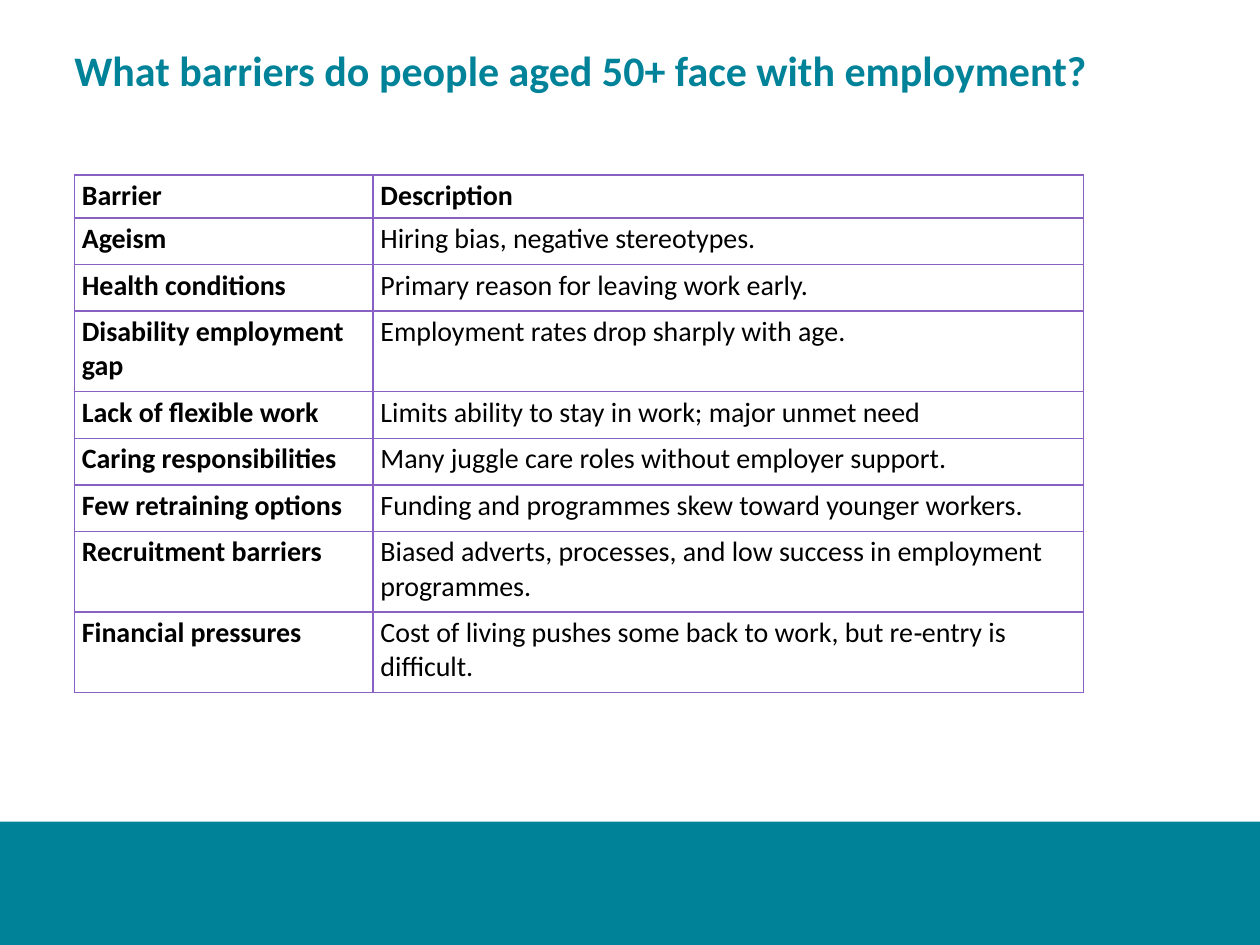
import pptx
import pptx.dml.color
import pptx.enum.shapes
import pptx.enum.text
import pptx.oxml
import pptx.oxml.ns
import pptx.util
from pptx.util import Inches

TEAL, PURPLE, BLACK = "008299", "8960C3", "000000"

ROWS = [
    ("Barrier", "Description"),
    ("Ageism", "Hiring bias, negative stereotypes."),
    ("Health conditions", "Primary reason for leaving work early."),
    ("Disability employment gap", "Employment rates drop sharply with age."),
    ("Lack of flexible work", "Limits ability to stay in work; major unmet need"),
    ("Caring responsibilities", "Many juggle care roles without employer support."),
    ("Few retraining options", "Funding and programmes skew toward younger workers."),
    ("Recruitment barriers",
     "Biased adverts, processes, and low success in employment programmes."),
    ("Financial pressures",
     "Cost of living pushes some back to work, but re‑entry is difficult."),
]
HEAD, ONE, TWO = 0.34, 0.37, 0.64  # row heights: header, one line, two lines
HEIGHTS = [HEAD, ONE, ONE, TWO, ONE, ONE, ONE, TWO, TWO]


def color(code):
    return pptx.dml.color.RGBColor.from_string(code)


class Deck:
    font = "Calibri"

    def __init__(self, wide, high):
        self.prs = pptx.Presentation()
        self.prs.slide_width, self.prs.slide_height = Inches(wide), Inches(high)
        self.slide = self.prs.slides.add_slide(self.prs.slide_layouts[5])

    def add_text(self, para, text, size, tint, bold):
        run = para.add_run()
        run.text = text
        font = run.font
        font.name, font.size, font.bold = self.font, pptx.util.Pt(size), bold
        font.color.rgb = color(tint)

    def title(self, text, x, y, w, h):
        box = self.slide.shapes.title
        box.left, box.top, box.width, box.height = map(Inches, (x, y, w, h))
        frame = box.text_frame
        frame.margin_left = frame.margin_right = 0
        frame.margin_top = frame.margin_bottom = 0
        frame.word_wrap = True
        frame.auto_size = pptx.enum.text.MSO_AUTO_SIZE.NONE
        frame.vertical_anchor = pptx.enum.text.MSO_ANCHOR.TOP
        para = frame.paragraphs[0]
        para.alignment = pptx.enum.text.PP_ALIGN.LEFT
        para.line_spacing = 0.9
        self.add_text(para, text, 24, TEAL, True)

    def band(self, x, y, w, h, tint):
        shape = self.slide.shapes.add_shape(
            pptx.enum.shapes.MSO_SHAPE.RECTANGLE, *map(Inches, (x, y, w, h)))
        shape.shadow.inherit = False
        shape.fill.solid()
        shape.fill.fore_color.rgb = color(tint)
        shape.line.fill.background()

    def border(self, cell, tint, width):
        props = cell._tc.get_or_add_tcPr()
        for spot, side in enumerate(("lnL", "lnR", "lnT", "lnB")):
            props.insert(spot, pptx.oxml.parse_xml(
                f'<a:{side} {pptx.oxml.ns.nsdecls("a")} w="{pptx.util.Pt(width)}">'
                f'<a:solidFill><a:srgbClr val="{tint}"/></a:solidFill></a:{side}>'))

    def table(self, rows, x, y, widths, heights):
        grid = self.slide.shapes.add_table(
            len(rows), len(widths), Inches(x), Inches(y),
            Inches(sum(widths)), Inches(sum(heights))).table
        grid.first_row = grid.horz_banding = False
        for col, width in zip(grid.columns, widths):
            col.width = Inches(width)
        for i, (row, height) in enumerate(zip(rows, heights)):
            grid.rows[i].height = Inches(height)
            for j, text in enumerate(row):
                cell = grid.cell(i, j)
                cell.margin_left = cell.margin_right = Inches(0.06)
                cell.margin_top = cell.margin_bottom = Inches(0.03)
                cell.fill.background()
                self.border(cell, PURPLE, 1)
                # Header row and first column are bold
                self.add_text(cell.text_frame.paragraphs[0], text, 16, BLACK,
                              i == 0 or j == 0)


def main():
    deck = Deck(10, 7.5)
    # Footer band
    deck.band(0, 6.52, 10, 0.98, TEAL)
    # Heading
    deck.title("What barriers do people aged 50+ face with employment?",
               0.59, 0.4, 8.82, 1.22)
    # Barriers and what they mean
    deck.table(ROWS, 0.59, 1.39, [2.37, 5.64], HEIGHTS)
    deck.prs.save("out.pptx")


if __name__ == "__main__":
    main()
